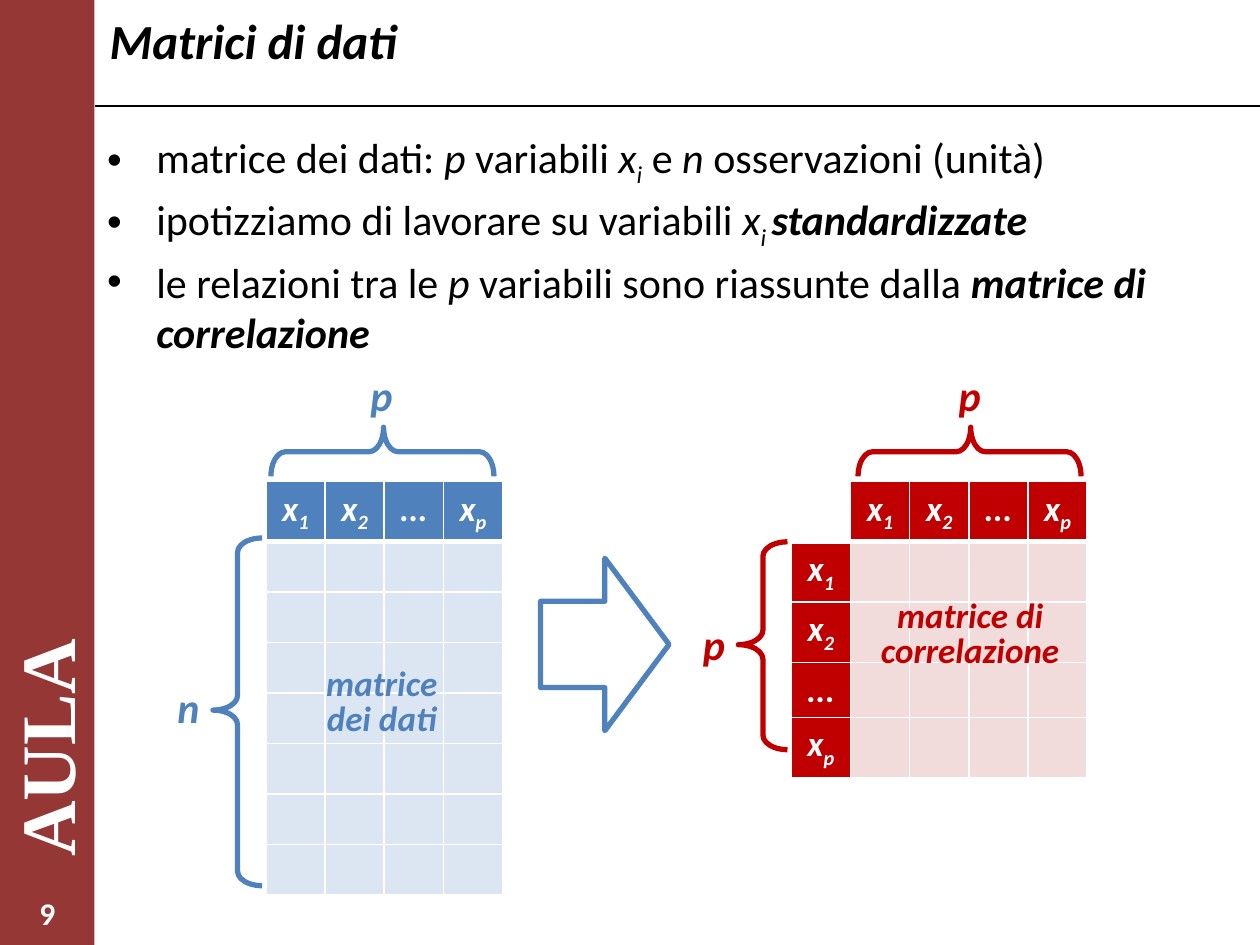
from lxml.etree import SubElement
from pptx import Presentation
from pptx.dml.color import RGBColor
from pptx.enum.shapes import MSO_CONNECTOR, MSO_SHAPE
from pptx.enum.text import MSO_ANCHOR, MSO_AUTO_SIZE, PP_ALIGN
from pptx.oxml.ns import qn
from pptx.util import Inches, Pt

BLUE, PALE_BLUE = "4F81BD", "DCE6F2"
RED, PALE_RED = "C00000", "F2DCDB"
MAROON, BLACK, WHITE = "953735", "000000", "FFFFFF"
VARIABLES = [("x", "1"), ("x", "2"), ("...", ""), ("x", "p")]
COLUMN = 0.47
BULLETS = [
    [("matrice dei dati: ", ""), ("p", "i"), (" variabili ", ""), ("x", "i"), ("i", "is"),
     (" e ", ""), ("n ", "i"), ("osservazioni (unità)", "")],
    [("ipotizziamo di lavorare su variabili ", ""), ("x", "i"), ("i ", "is"),
     ("standardizzate", "bi")],
    [("le relazioni tra le ", ""), ("p ", "i"), ("variabili sono riassunte dalla ", ""),
     ("matrice di correlazione", "bi")],
]


def rgb(color):
    return RGBColor.from_string(color)


def place(shape, left, top, width, height):
    shape.left, shape.top = Inches(left), Inches(top)
    shape.width, shape.height = Inches(width), Inches(height)


def style_run(run, size, color, style="", font="Calibri"):
    run.font.name = font
    run.font.size = Pt(size)
    run.font.color.rgb = rgb(color)
    run.font.bold = "b" in style
    run.font.italic = "i" in style
    if "s" in style:
        run.font._element.set("baseline", "-25000")


def add_runs(paragraph, pieces, size, color):
    for text, style in pieces:
        run = paragraph.add_run()
        run.text = text
        style_run(run, size, color, style)


def add_label(slide, box, text, size, color, style="bi", font="Calibri", wrap=False):
    label = slide.shapes.add_textbox(*map(Inches, box))
    label.text_frame.word_wrap = wrap
    label.text_frame.text = text
    paragraph = label.text_frame.paragraphs[0]
    style_run(paragraph.runs[0], size, color, style, font)
    if wrap:
        paragraph.alignment = PP_ALIGN.CENTER
    return label


def add_caption(slide, box, text, color):
    caption = add_label(slide, box, text, 20, color, wrap=True)
    caption.text_frame.paragraphs[0].line_spacing = Pt(20)


def add_outline(slide, preset, box, color, rotation=0):
    outline = slide.shapes.add_shape(preset, *map(Inches, box))
    outline.shadow.inherit = False
    outline.fill.background()
    outline.line.color.rgb = rgb(color)
    outline.line.width = Pt(3)
    outline.rotation = rotation
    return outline


def add_brace(slide, box, color, rotation=0):
    brace = add_outline(slide, MSO_SHAPE.LEFT_BRACE, box, color, rotation)
    brace.adjustments[0] = 0.295
    brace.adjustments[1] = 0.495


def add_border(cell, side, width):
    border = SubElement(cell._tc.get_or_add_tcPr(), qn(f"a:ln{side}"), w=str(Pt(width)))
    fill = SubElement(border, qn("a:solidFill"))
    SubElement(fill, qn("a:srgbClr"), val=WHITE)


def fill_cell(cell, color, row):
    for side in "LRTB":
        thick = (row, side) in [(0, "B"), (1, "T")]
        add_border(cell, side, 3 if thick else 1)
    if color:
        cell.fill.solid()
        cell.fill.fore_color.rgb = rgb(color)
    else:
        cell.fill.background()


def write_variable(cell, variable):
    name, index = variable
    paragraph = cell.text_frame.paragraphs[0]
    paragraph.alignment = PP_ALIGN.CENTER
    add_runs(paragraph, [(name, "bi")] + ([(index, "bis")] if index else []), 20, WHITE)


def add_matrix(slide, left, top, heights, strong, pale, row_headers=False):
    first = int(row_headers)
    columns = len(VARIABLES) + first
    matrix = slide.shapes.add_table(len(heights), columns, Inches(left), Inches(top),
                                    Inches(COLUMN * columns), Inches(sum(heights))).table
    matrix.first_row = matrix.horz_banding = False
    for column in matrix.columns:
        column.width = Inches(COLUMN)
    for r, height in enumerate(heights):
        matrix.rows[r].height = Inches(height)
        for c in range(columns):
            cell = matrix.cell(r, c)
            corner = r == 0 and c < first
            header = r == 0 or c < first
            fill_cell(cell, None if corner else strong if header else pale, r)
            if header and not corner:
                write_variable(cell, VARIABLES[c - first if r == 0 else r - 1])


def add_frame(slide):
    band = slide.shapes.add_shape(MSO_SHAPE.RECTANGLE, 0, 0, Inches(0.75), Inches(7.5))
    band.shadow.inherit = False
    band.fill.solid()
    band.fill.fore_color.rgb = rgb(MAROON)
    band.line.fill.background()
    rule = slide.shapes.add_connector(MSO_CONNECTOR.STRAIGHT, Inches(0.75), Inches(0.84),
                                      Inches(10), Inches(0.84))
    rule.line.color.rgb = rgb(BLACK)
    rule.line.width = Pt(1)
    SubElement(rule._element.spPr, qn("a:effectLst"))
    school = add_label(slide, (0.02, 4.97, 0.67, 1.83), "AULA", 44, WHITE, "b",
                       "Times New Roman").text_frame
    school.margin_left = school.margin_right = school.margin_top = school.margin_bottom = 0
    school.vertical_anchor = MSO_ANCHOR.MIDDLE
    school._txBody.bodyPr.set("vert", "vert270")
    add_label(slide, (0, 7.05, 0.75, 0.4), "9", 18, WHITE, "b", wrap=True)


def write_title(title):
    place(title, 0.75, 0, 9.25, 0.99)
    frame = title.text_frame
    frame.text = "Matrici di dati"
    frame.auto_size = MSO_AUTO_SIZE.NONE
    frame.vertical_anchor = MSO_ANCHOR.TOP
    frame.margin_left, frame.margin_top = Inches(0.12), Inches(0.08)
    frame.margin_right = frame.margin_bottom = 0
    frame.paragraphs[0].alignment = PP_ALIGN.LEFT
    style_run(frame.paragraphs[0].runs[0], 28, BLACK, "bi")


def write_bullets(body):
    place(body, 0.75, 0.99, 9.25, 6.51)
    frame = body.text_frame
    frame.auto_size = MSO_AUTO_SIZE.NONE
    for number, pieces in enumerate(BULLETS):
        paragraph = frame.add_paragraph() if number else frame.paragraphs[0]
        paragraph.space_before, paragraph.space_after = Pt(0), Pt(3)
        properties = paragraph._p.get_or_add_pPr()
        properties.set("marL", str(Inches(0.39)))
        properties.set("indent", str(-Inches(0.39)))
        SubElement(properties, qn("a:buFont"), typeface="Arial")
        SubElement(properties, qn("a:buChar"), char="•")
        add_runs(paragraph, pieces, 24, BLACK)


def main():
    deck = Presentation()
    deck.slide_width, deck.slide_height = Inches(10), Inches(7.5)
    slide = deck.slides.add_slide(deck.slide_layouts[1])
    add_frame(slide)
    write_title(slide.shapes.title)
    write_bullets(slide.placeholders[1])

    add_matrix(slide, 2.11, 3.82, [COLUMN] + [0.4] * 7, BLUE, PALE_BLUE)
    add_brace(slide, (1.69, 4.27, 0.39, 2.76), BLUE)
    add_brace(slide, (2.84, 2.7, 0.39, 1.77), BLUE, 90)
    add_label(slide, (2.84, 2.88, 0.38, 0.5), "p", 24, BLUE)
    add_label(slide, (1.31, 5.36, 0.38, 0.5), "n", 24, BLUE)
    add_caption(slide, (2.48, 5.26, 1.1, 0.66), "matrice dei dati", BLUE)

    add_matrix(slide, 6.28, 3.82, [COLUMN] * 3 + [0.43, COLUMN], RED, PALE_RED, True)
    add_brace(slide, (7.5, 2.7, 0.39, 1.77), RED, 90)
    add_brace(slide, (5.86, 4.3, 0.39, 1.65), RED)
    add_label(slide, (7.51, 2.88, 0.38, 0.5), "p", 24, RED)
    add_label(slide, (5.48, 4.86, 0.38, 0.5), "p", 24, RED)
    add_caption(slide, (6.87, 4.72, 1.66, 0.66), "matrice di correlazione", RED)

    add_outline(slide, MSO_SHAPE.RIGHT_ARROW, (4.29, 4.43, 1.02, 1.37), BLUE)
    deck.save("out.pptx")


if __name__ == "__main__":
    main()
